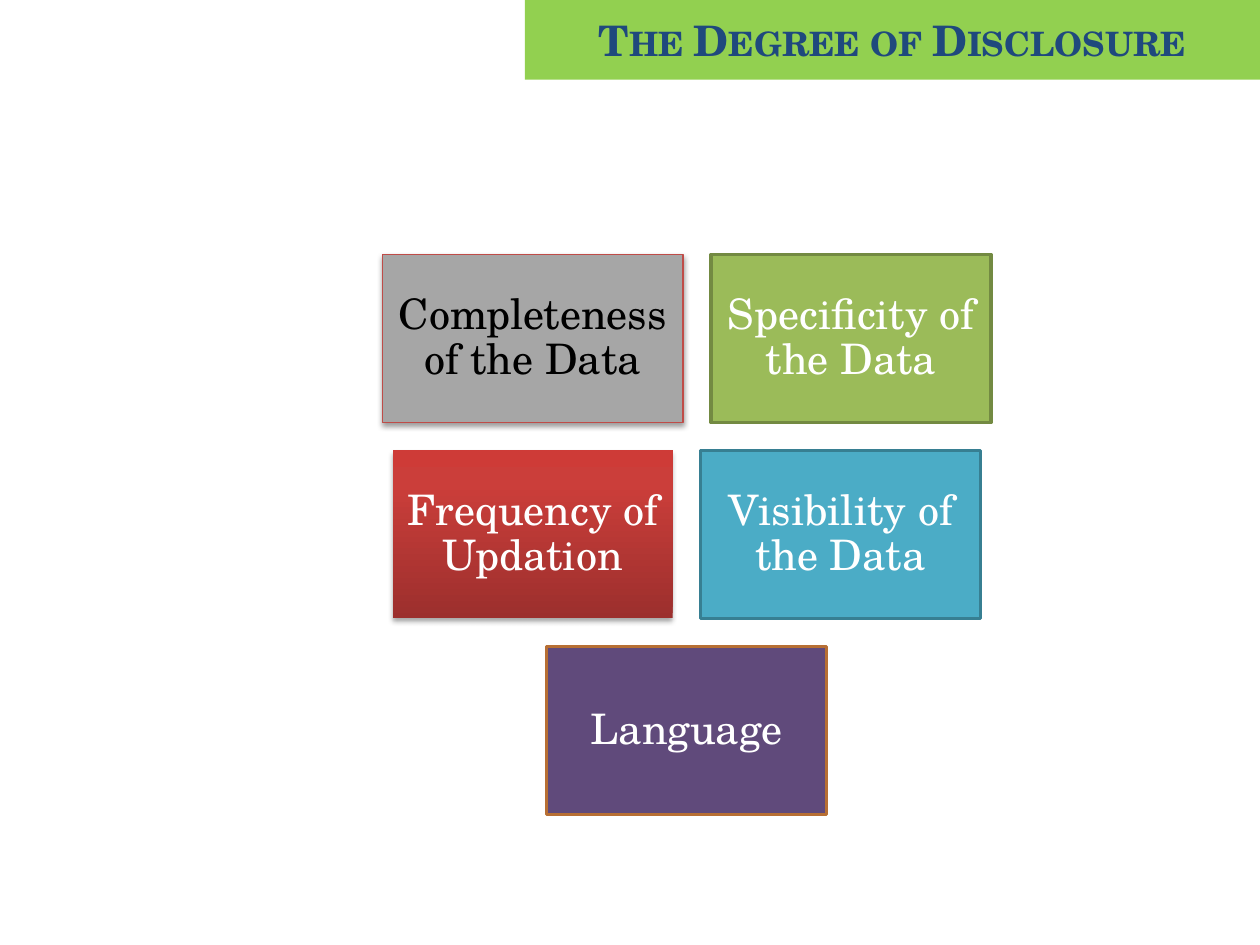
"""Build the slide on the degree of disclosure."""
from copy import deepcopy
from dataclasses import dataclass
from typing import Optional

from lxml.etree import SubElement
from pptx import Presentation
from pptx.dml.color import RGBColor
from pptx.enum.shapes import MSO_SHAPE as Shape
from pptx.enum.text import MSO_ANCHOR as Anchor, PP_ALIGN as Align
from pptx.oxml.ns import qn
from pptx.util import Pt


@dataclass(frozen=True)
class Theme:
    font: str = "TeX Gyre Schola"
    size: float = 24
    banner: str = "92D050"
    title: str = "1F497D"
    dark: str = "000000"
    light: str = "FFFFFF"
    gray: str = "A6A6A6"
    rose: str = "BF4C48"
    green: str = "9BBB59"
    olive: str = "738A42"
    blue: str = "4BACC6"
    teal: str = "377F92"
    purple: str = "604A7B"
    orange: str = "B76F34"
    reds: tuple = ((0, "9C2F2D"), (0.8, "CB3E3A"), (1, "CE3B37"))


@dataclass(frozen=True)
class Shadow:
    opacity: int
    distance: float
    blur: float = 3.1


@dataclass(frozen=True)
class Box:
    text: str
    fill: str | tuple
    line: Optional[str] = None
    line_width: float = 2
    color: str = Theme.light
    width: float = 160
    shadow: Optional[Shadow] = None


T = Theme()
CENTER, TOP, HEIGHT, GAP, INSET = 392.4, 145.4, 96, 16, 7.2
ROWS = (
    (
        Box("Completeness of the Data", T.gray, T.rose, 0.75, T.dark, 172, Shadow(38, 1.6)),
        Box("Specificity of the Data", T.green, T.olive),
    ),
    (
        Box("Frequency of Updation", T.reds, shadow=Shadow(35, 1.8)),
        Box("Visibility of the Data", T.blue, T.teal),
    ),
    (Box("Language", T.purple, T.orange),),
)


def rgb(value: str) -> RGBColor:
    return RGBColor.from_string(value)


def set_gradient(sp, stops: tuple) -> None:
    sp.fill.gradient()
    sp.fill.gradient_angle = 90
    gs_list = sp._element.spPr.find(f".//{qn('a:gsLst')}")
    while len(gs_list) < len(stops):
        gs_list.append(deepcopy(gs_list[0]))
    for stop, (position, color) in zip(sp.fill.gradient_stops, stops):
        stop.position = position
        stop.color.rgb = rgb(color)


def set_shadow(sp, shadow: Shadow) -> None:
    effects = sp._element.spPr.find(qn("a:effectLst"))
    outer = SubElement(
        effects, qn("a:outerShdw"), blurRad=str(Pt(shadow.blur)),
        dist=str(Pt(shadow.distance)), dir="5400000", rotWithShape="0",
    )
    color = SubElement(outer, qn("a:srgbClr"), val=T.dark)
    SubElement(color, qn("a:alpha"), val=str(shadow.opacity * 1000))


def add_box(s, box: Box, left: float, top: float, height: float):
    sp = s.shapes.add_shape(Shape.RECTANGLE, Pt(left), Pt(top), Pt(box.width), Pt(height))
    sp.shadow.inherit = False
    if isinstance(box.fill, tuple):
        set_gradient(sp, box.fill)
    else:
        sp.fill.solid()
        sp.fill.fore_color.rgb = rgb(box.fill)
    if box.line:
        sp.line.color.rgb = rgb(box.line)
        sp.line.width = Pt(box.line_width)
    else:
        sp.line.fill.background()
    if box.shadow:
        set_shadow(sp, box.shadow)
    tf = sp.text_frame
    tf.word_wrap = True
    tf.vertical_anchor = Anchor.MIDDLE
    tf.margin_left = tf.margin_right = tf.margin_top = tf.margin_bottom = Pt(INSET)
    tf.text = box.text
    p = tf.paragraphs[0]
    p.alignment = Align.CENTER
    p.line_spacing = 0.9
    font = p.runs[0].font
    font.name, font.size, font.color.rgb = T.font, Pt(T.size), rgb(box.color)
    return sp


def add_title(s) -> None:
    banner = Box("The Degree of Disclosure", T.banner, color=T.title, width=420)
    p = add_box(s, banner, 300, 0, 45.5).text_frame.paragraphs[0]
    p.line_spacing = 1.0
    r = p.runs[0]
    r.font.bold = True
    r.font._element.set("cap", "small")


def add_row(s, row: tuple[Box, ...], top: float) -> None:
    left = CENTER - (sum(box.width for box in row) + GAP * (len(row) - 1)) / 2
    for box in row:
        add_box(s, box, left, top, HEIGHT)
        left += box.width + GAP


def main() -> None:
    prs = Presentation()
    prs.slide_width, prs.slide_height = Pt(720), Pt(540)
    s = prs.slides.add_slide(prs.slide_layouts[6])
    add_title(s)
    for i, row in enumerate(ROWS):
        add_row(s, row, TOP + i * (HEIGHT + GAP))
    prs.save("out.pptx")


if __name__ == "__main__":
    main()
